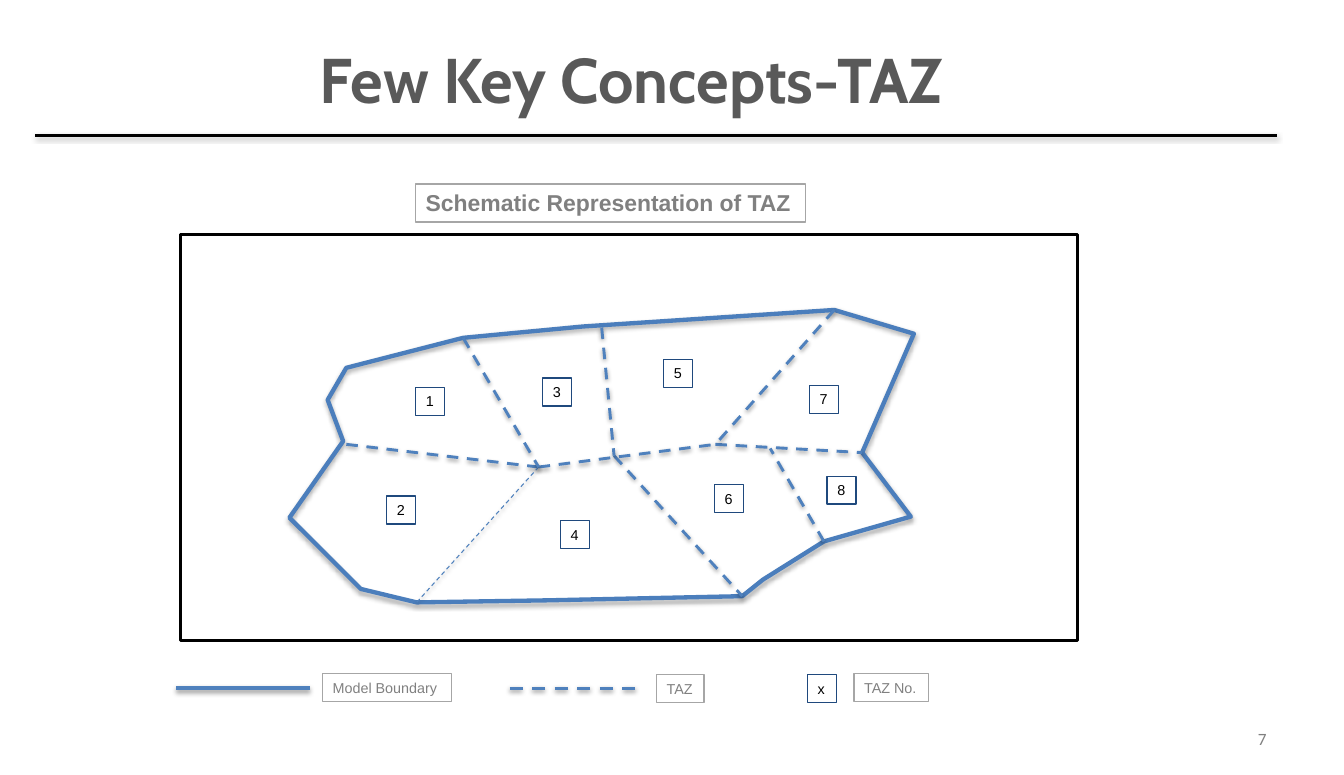
from lxml.etree import SubElement
from pptx import Presentation
from pptx.dml.color import RGBColor
from pptx.enum.dml import MSO_LINE
from pptx.enum.shapes import MSO_CONNECTOR, MSO_SHAPE
from pptx.enum.text import MSO_ANCHOR, MSO_AUTO_SIZE, PP_ALIGN
from pptx.oxml.ns import qn
from pptx.util import Pt

PX = 9144  # EMU per px, 100 px to the inch
COLORS = {
    "black": "000000",
    "white": "FFFFFF",
    "title": "595959",
    "grey": "808080",
    "label": "A6A6A6",
    "number": "1F497D",
    "zone": "4F81BD",
    "boundary": "4B7EBC",
}


class SlideBuilder:
    def __init__(self, slide):
        self.slide = slide

    def color(self, name):
        return RGBColor.from_string(COLORS[name])

    def place(self, shape, box):
        shape.left, shape.top, shape.width, shape.height = [v * PX for v in box]

    def outline(self, shape, color, width, dashed=False):
        shape.line.color.rgb = self.color(color)
        shape.line.width = Pt(width)
        if dashed:
            shape.line.dash_style = MSO_LINE.DASH

    def drop_shadow(self, shape, opacity):
        effects = SubElement(shape.element.spPr, qn("a:effectLst"))
        shadow = SubElement(effects, qn("a:outerShdw"), blurRad="40000",
                            dist="20000", dir="5400000", rotWithShape="0")
        shade = SubElement(shadow, qn("a:srgbClr"), val=COLORS["black"])
        SubElement(shade, qn("a:alpha"), val=str(opacity * 1000))

    def add_text(self, shape, text, size, font, color, bold=False, align=PP_ALIGN.LEFT):
        paragraph = shape.text_frame.paragraphs[0]
        paragraph.alignment = align
        run = paragraph.add_run()
        run.text = text
        run.font.size = Pt(size)
        run.font.name = font
        run.font.bold = bold
        run.font.color.rgb = self.color(color)

    def title(self, text, box):
        shape = self.slide.shapes.title
        self.place(shape, box)
        shape.text_frame.vertical_anchor = MSO_ANCHOR.TOP
        shape.text_frame.auto_size = MSO_AUTO_SIZE.NONE
        self.add_text(shape, text, 44, "Cabin", "title", True, PP_ALIGN.CENTER)

    def page_number(self, text, box):
        shape = self.slide.shapes.add_textbox(*[v * PX for v in box])
        shape.text_frame.word_wrap = True
        shape.text_frame.vertical_anchor = MSO_ANCHOR.MIDDLE
        self.add_text(shape, text, 12, "Calibri", "grey", align=PP_ALIGN.RIGHT)

    def frame(self, box):
        shape = self.slide.shapes.add_shape(MSO_SHAPE.RECTANGLE, *[v * PX for v in box])
        shape.shadow.inherit = False
        shape.fill.solid()
        shape.fill.fore_color.rgb = self.color("white")
        self.outline(shape, "black", 2)

    def line(self, start, end, color="zone", width=2, dashed=False):
        shape = self.slide.shapes.add_connector(
            MSO_CONNECTOR.STRAIGHT, *[v * PX for v in (*start, *end)])
        self.outline(shape, color, width, dashed)
        self.drop_shadow(shape, 38)

    def polygon(self, points):
        builder = self.slide.shapes.build_freeform(*points[0], scale=PX)
        builder.add_line_segments(points[1:], close=True)
        shape = builder.convert_to_shape()
        shape.fill.background()
        self.outline(shape, "boundary", 3)
        self.drop_shadow(shape, 35)

    def label(self, text, box, border="label", color="grey", size=10, bold=False):
        shape = self.slide.shapes.add_textbox(*[v * PX for v in box])
        shape.text_frame.word_wrap = False
        shape.text_frame.auto_size = MSO_AUTO_SIZE.SHAPE_TO_FIT_TEXT
        self.outline(shape, border, 1)
        self.add_text(shape, text, size, "Arial", color, bold)

    def number(self, text, left, top):
        self.label(text, (left, top, 28, 27), "number", "black")


def main():
    presentation = Presentation()
    presentation.slide_width = 1300 * PX
    presentation.slide_height = 750 * PX
    slide = presentation.slides.add_slide(presentation.slide_layouts[5])
    builder = SlideBuilder(slide)

    # Heading and page number
    builder.page_number("7", (932, 695, 303, 40))
    builder.title("Few Key Concepts-TAZ", (180, 34, 862, 116))
    builder.line((34, 131), (1235, 131), "black")

    # Map frame and model boundary
    builder.frame((175, 227, 867, 393))
    south_west, south, south_east = (403, 583), (718, 577), (797, 524)
    east, north_east, north_west = (834, 438), (807, 300), (448, 327)
    builder.polygon([
        (280, 501), (349, 570), south_west, (531, 581), south, (738, 561),
        south_east, (881, 500), east, (884, 323), north_east, (564, 316),
        north_west, (335, 356), (317, 387), (332, 427),
    ])

    # Zone borders
    west_hub, middle_hub, east_hub = (521, 452), (594, 441), (692, 430)
    borders = [
        ((335, 430), west_hub, 2),
        (west_hub, east_hub, 2),
        (east_hub, east, 2),
        (west_hub, south_west, 0.75),
        (middle_hub, south, 2),
        (north_west, west_hub, 2),
        ((582, 317), middle_hub, 2),
        (north_east, east_hub, 2),
        (south_east, (745, 434), 2),
    ]
    for start, end, width in borders:
        builder.line(start, end, width=width, dashed=True)

    # Zone numbers
    zones = [(402, 375), (374, 480), (525, 366), (542, 504),
             (642, 348), (691, 469), (783, 373), (800, 461)]
    for number, (left, top) in enumerate(zones, 1):
        builder.number(str(number), left, top)

    # Legend
    builder.line((170, 666), (300, 666), width=3)
    builder.label("Model Boundary", (312, 652, 125, 27))
    builder.line((493, 666), (622, 666), width=2.25, dashed=True)
    builder.label("TAZ", (635, 653, 46, 27))
    builder.number("x", 781, 653)
    builder.label("TAZ No.", (826, 652, 72, 27))

    # Map caption
    builder.label("Schematic Representation of TAZ", (402, 178, 377, 37), size=16, bold=True)

    presentation.save("out.pptx")


if __name__ == "__main__":
    main()
